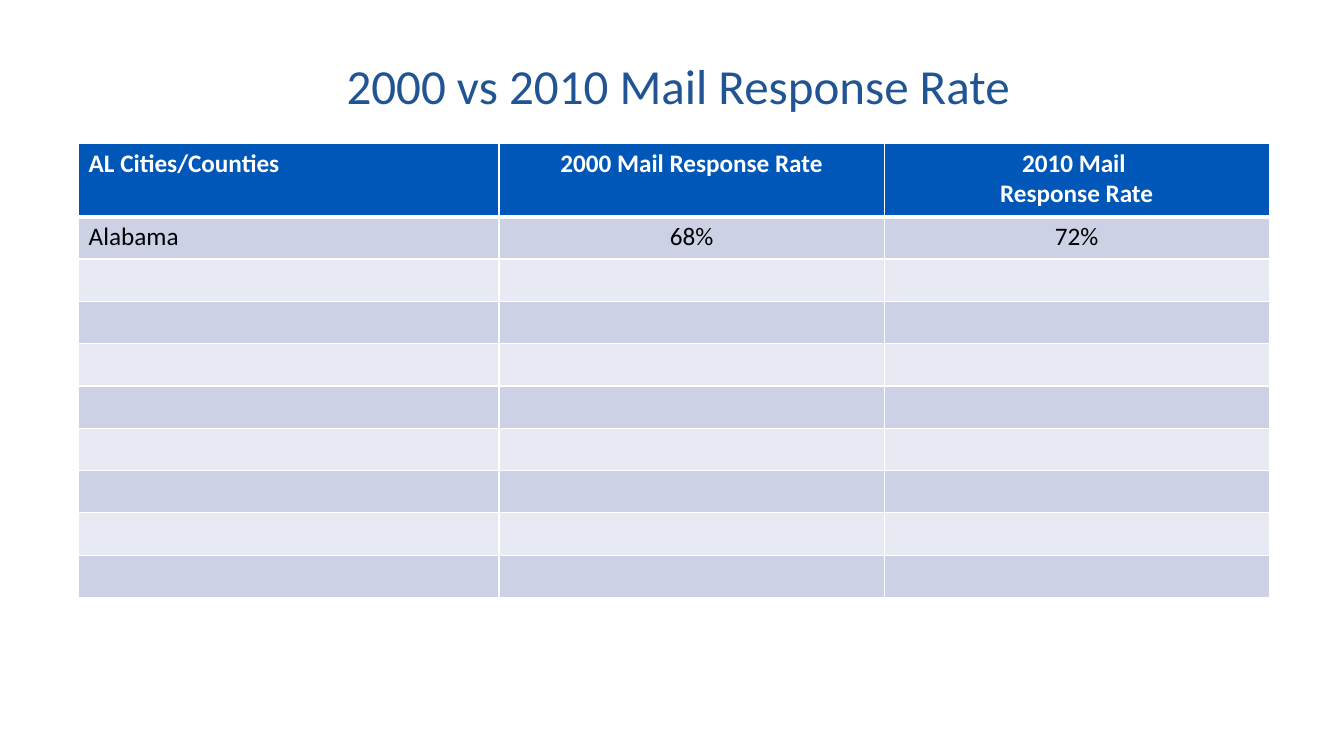
from dataclasses import dataclass

from lxml import etree
from pptx import Presentation
from pptx import util as u
from pptx.dml.color import RGBColor
from pptx.enum import text
from pptx.oxml import ns


@dataclass(frozen=True)
class Theme:
    font: str = "Calibri"
    title_size: int = 35
    table_size: int = 18
    title: str = "205493"
    header: str = "0057B8"
    header_text: str = "FFFFFF"
    body_text: str = "000000"
    bands: tuple = ("CCD1E6", "E7EAF3")
    border: str = "FFFFFF"


THEME = Theme()
HEADERS = ["AL Cities/Counties", "2000 Mail Response Rate", "2010 Mail \nResponse Rate"]
ALABAMA = ["Alabama", "68%", "72%"]
EMPTY_ROWS = 8
COLUMN_WIDTHS = [4.17, 3.82, 3.82]
HEADER_HEIGHT, ROW_HEIGHT = 0.73, 0.42


def format_text(paragraph, size, color, bold, align):
    paragraph.alignment = align
    values = {"name": THEME.font, "size": u.Pt(size), "bold": bold}
    for name, value in values.items():
        setattr(paragraph.font, name, value)
    paragraph.font.color.rgb = RGBColor.from_string(color)


def set_borders(cell, bottom_width):
    properties = cell._tc.get_or_add_tcPr()
    widths = {"a:lnL": 1, "a:lnR": 1, "a:lnT": 1, "a:lnB": bottom_width}
    for index, (tag, width) in enumerate(widths.items()):
        line = etree.Element(ns.qn(tag), w=str(u.Pt(width)))
        fill = etree.SubElement(line, ns.qn("a:solidFill"))
        etree.SubElement(fill, ns.qn("a:srgbClr"), val=THEME.border)
        properties.insert(index, line)  # borders come before the fill


def add_title(slide, words):
    title = slide.shapes.title
    box = {"left": 1.48, "top": 0.34, "width": 10.5, "height": 1}
    for name, value in box.items():
        setattr(title, name, u.Inches(value))
    frame = title.text_frame
    frame.text = words
    frame.word_wrap = True
    frame.vertical_anchor = text.MSO_ANCHOR.MIDDLE
    format_text(frame.paragraphs[0], THEME.title_size, THEME.title, False, text.PP_ALIGN.CENTER)


def fill_cell(cell, words, row, column):
    is_header = row == 0
    cell.text = words
    cell.fill.solid()
    fill = THEME.header if is_header else THEME.bands[(row - 1) % 2]
    cell.fill.fore_color.rgb = RGBColor.from_string(fill)
    color = THEME.header_text if is_header else THEME.body_text
    align = text.PP_ALIGN.CENTER if column else text.PP_ALIGN.LEFT
    for paragraph in cell.text_frame.paragraphs:
        format_text(paragraph, THEME.table_size, color, is_header, align)
    set_borders(cell, 3 if is_header else 1)


def add_rate_table(slide, rows):
    heights = [HEADER_HEIGHT] + [ROW_HEIGHT] * (len(rows) - 1)
    frame = slide.shapes.add_table(
        len(rows), len(COLUMN_WIDTHS), u.Inches(0.78), u.Inches(1.42),
        u.Inches(sum(COLUMN_WIDTHS)), u.Inches(sum(heights)))
    table = frame.table
    for column, width in zip(table.columns, COLUMN_WIDTHS):
        column.width = u.Inches(width)
    for row, height in zip(table.rows, heights):
        row.height = u.Inches(height)
    for row, entries in enumerate(rows):
        for column, words in enumerate(entries):
            fill_cell(table.cell(row, column), words, row, column)


def main():
    presentation = Presentation()
    presentation.slide_width = u.Inches(13.33)
    presentation.slide_height = u.Inches(7.5)
    slide = presentation.slides.add_slide(presentation.slide_layouts.get_by_name("Title Only"))

    # Title
    add_title(slide, "2000 vs 2010 Mail Response Rate")

    # Response rates, with rows left open for cities and counties
    empty = [""] * len(COLUMN_WIDTHS)
    add_rate_table(slide, [HEADERS, ALABAMA] + [empty] * EMPTY_ROWS)

    presentation.save("out.pptx")


if __name__ == "__main__":
    main()
